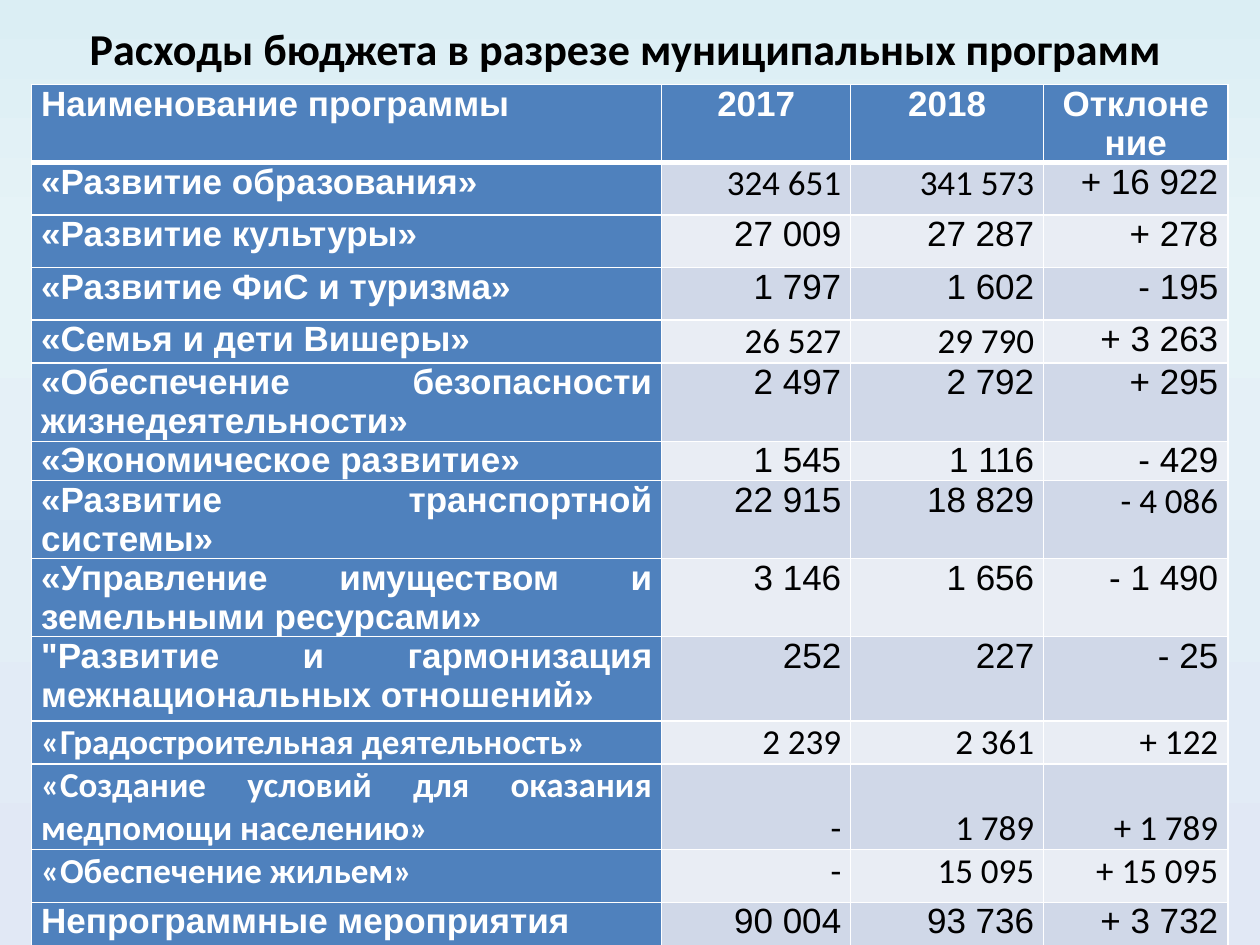
"""Build a slide with a table of budget spending by municipal programme."""
from copy import deepcopy
from dataclasses import dataclass

from lxml import etree
from pptx import Presentation
from pptx import util as u
from pptx.dml.color import RGBColor
from pptx.enum import text
from pptx.oxml.ns import qn


@dataclass(frozen=True)
class Theme:
    """Colours, fonts and type sizes of the slide."""
    sans: str = "Arial"
    body: str = "Calibri"
    title_size: float = 25.2
    table_size: float = 20
    black: str = "000000"
    white: str = "FFFFFF"
    accent: str = "4F81BD"
    bands: tuple[str, str] = ("D0D8E8", "E9EDF4")
    backdrop: tuple[tuple[float, str], ...] = (
        (0, "DBEEF4"), (0.25, "E6F3F7"), (1, "E1E8F5"))


THEME = Theme()
SANS, BODY = THEME.sans, THEME.body


@dataclass(frozen=True)
class Programme:
    """One table row: name, two years, deviation, height in cm and fonts."""
    name: str
    year_2017: str
    year_2018: str
    deviation: str
    height: float
    fonts: tuple[str, str, str, str] = (SANS,) * 4
    anchor: text.MSO_ANCHOR = text.MSO_ANCHOR.TOP

    @property
    def values(self) -> tuple[str, str, str, str]:
        """Return the cell texts from left to right."""
        return self.name, self.year_2017, self.year_2018, self.deviation


YEARS_IN_BODY = (SANS, BODY, BODY, SANS)
ALL_BODY = (BODY,) * 4
COLUMN_WIDTHS = (12.7, 3.81, 3.89, 3.71)
HEADER = Programme("Наименование программы", "2017", "2018", "Отклоне\nние", 1.5)
PROGRAMMES = (
    Programme("«Развитие образования»", "324 651", "341 573", "+ 16 922", 1.06, YEARS_IN_BODY),
    Programme("«Развитие культуры»", "27 009", "27 287", "+ 278", 1.06),
    Programme("«Развитие ФиС и туризма»", "1 797", "1 602", "- 195", 1.06),
    Programme("«Семья и дети Вишеры»", "26 527", "29 790", "+ 3 263", 0.79, YEARS_IN_BODY),
    Programme("«Обеспечение безопасности жизнедеятельности»",
              "2 497", "2 792", "+ 295", 1.5),
    Programme("«Экономическое развитие»", "1 545", "1 116", "- 429", 0.79),
    Programme("«Развитие транспортной системы»", "22 915", "18 829", "- 4 086", 0.84,
              (SANS, SANS, SANS, BODY)),
    Programme("«Управление имуществом и земельными ресурсами»",
              "3 146", "1 656", "- 1 490", 1.5),
    Programme("\"Развитие и гармонизация межнациональных отношений»",
              "252", "227", "- 25", 1.7),
    Programme("«Градостроительная деятельность»", "2 239", "2 361", "+ 122", 0.84, ALL_BODY),
    Programme("«Создание условий для оказания медпомощи населению»",
              "-", "1 789", "+ 1 789", 1.06, ALL_BODY, text.MSO_ANCHOR.BOTTOM),
    Programme("«Обеспечение жильем»", "-", "15 095", "+ 15 095", 1.06, ALL_BODY),
    Programme("Непрограммные мероприятия", "90 004", "93 736", "+ 3 732", 1.06),
)


def write(frame, content: str, *, font: str, size: float, color: str,
          bold: bool, align: text.PP_ALIGN) -> None:
    """Fill a text frame, one paragraph per line, in a single format."""
    frame.text = content
    for paragraph in frame.paragraphs:
        paragraph.alignment = align
        for run in paragraph.runs:
            run.font.name = font
            run.font.size = u.Pt(size)
            run.font.bold = bold
            run.font.color.rgb = RGBColor.from_string(color)


def set_borders(cell, bottom: float) -> None:
    """Draw white cell borders with the given bottom width in points."""
    properties = cell._tc.get_or_add_tcPr()
    widths = {"a:lnL": 1, "a:lnR": 1, "a:lnT": 1, "a:lnB": bottom}
    for index, (tag, width) in enumerate(widths.items()):
        line = etree.Element(qn(tag), w=str(u.Pt(width)))
        fill = etree.SubElement(line, qn("a:solidFill"))
        etree.SubElement(fill, qn("a:srgbClr"), val=THEME.white)
        properties.insert(index, line)


def paint_background(slide) -> None:
    """Give the slide its vertical gradient."""
    fill = slide.background.fill
    fill.gradient()
    fill.gradient_angle = 270
    stop_list = slide.element.xpath(".//a:gsLst")[0]
    stop_list.append(deepcopy(stop_list[-1]))
    for stop, (position, color) in zip(fill.gradient_stops, THEME.backdrop):
        stop.position = position
        stop.color.rgb = RGBColor.from_string(color)


def add_title(slide, content: str) -> None:
    """Place and format the title."""
    title = slide.shapes.title
    title.left, title.top = u.Cm(0.71), u.Cm(0.43)
    title.width, title.height = u.Cm(23.8), u.Cm(1.07)
    frame = title.text_frame
    frame.auto_size = text.MSO_AUTO_SIZE.NONE
    frame.vertical_anchor = text.MSO_ANCHOR.MIDDLE
    write(frame, content, font=BODY, size=THEME.title_size, color=THEME.black,
          bold=True, align=text.PP_ALIGN.CENTER)


def fill_row(table, row: int, programme: Programme) -> None:
    """Write one programme, or the header, into a table row."""
    is_header = row == 0
    table.rows[row].height = u.Cm(programme.height)
    for column, (value, font) in enumerate(zip(programme.values, programme.fonts)):
        cell = table.cell(row, column)
        is_name = column == 0
        strong = is_header or is_name
        if is_name:
            align = text.PP_ALIGN.JUSTIFY
        else:
            align = text.PP_ALIGN.CENTER if is_header else text.PP_ALIGN.RIGHT
        cell.margin_left = cell.margin_right = u.Cm(0.19)
        cell.margin_top = cell.margin_bottom = 0
        cell.vertical_anchor = text.MSO_ANCHOR.TOP if is_name else programme.anchor
        write(cell.text_frame, value, font=font, size=THEME.table_size,
              color=THEME.white if strong else THEME.black, bold=strong, align=align)
        cell.fill.solid()
        cell.fill.fore_color.rgb = RGBColor.from_string(
            THEME.accent if strong else THEME.bands[(row - 1) % 2])
        set_borders(cell, bottom=3 if is_header else 1)


def add_budget_table(slide) -> None:
    """Add the table of programmes."""
    rows = (HEADER, *PROGRAMMES)
    table = slide.shapes.add_table(
        len(rows), len(COLUMN_WIDTHS), u.Cm(0.64), u.Cm(1.7),
        u.Cm(sum(COLUMN_WIDTHS)), u.Cm(sum(row.height for row in rows))).table
    for column, width in zip(table.columns, COLUMN_WIDTHS):
        column.width = u.Cm(width)
    for index, programme in enumerate(rows):
        fill_row(table, index, programme)


def main() -> None:
    """Build and save the presentation."""
    presentation = Presentation()
    presentation.slide_width, presentation.slide_height = u.Cm(25.4), u.Cm(19.05)
    slide = presentation.slides.add_slide(presentation.slide_layouts[5])
    paint_background(slide)
    add_title(slide, "Расходы бюджета в разрезе муниципальных программ")
    add_budget_table(slide)
    presentation.save("out.pptx")


if __name__ == "__main__":
    main()
